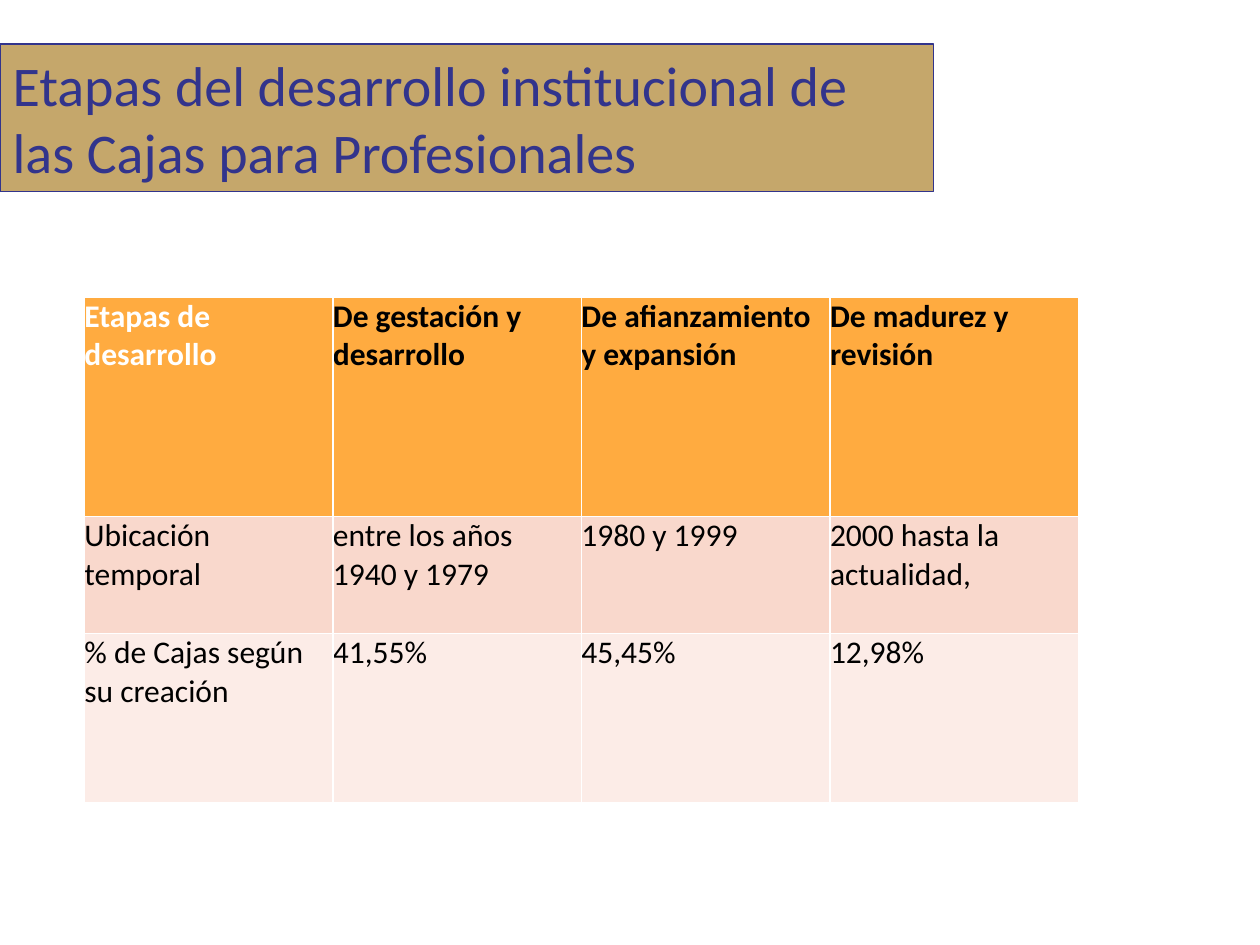
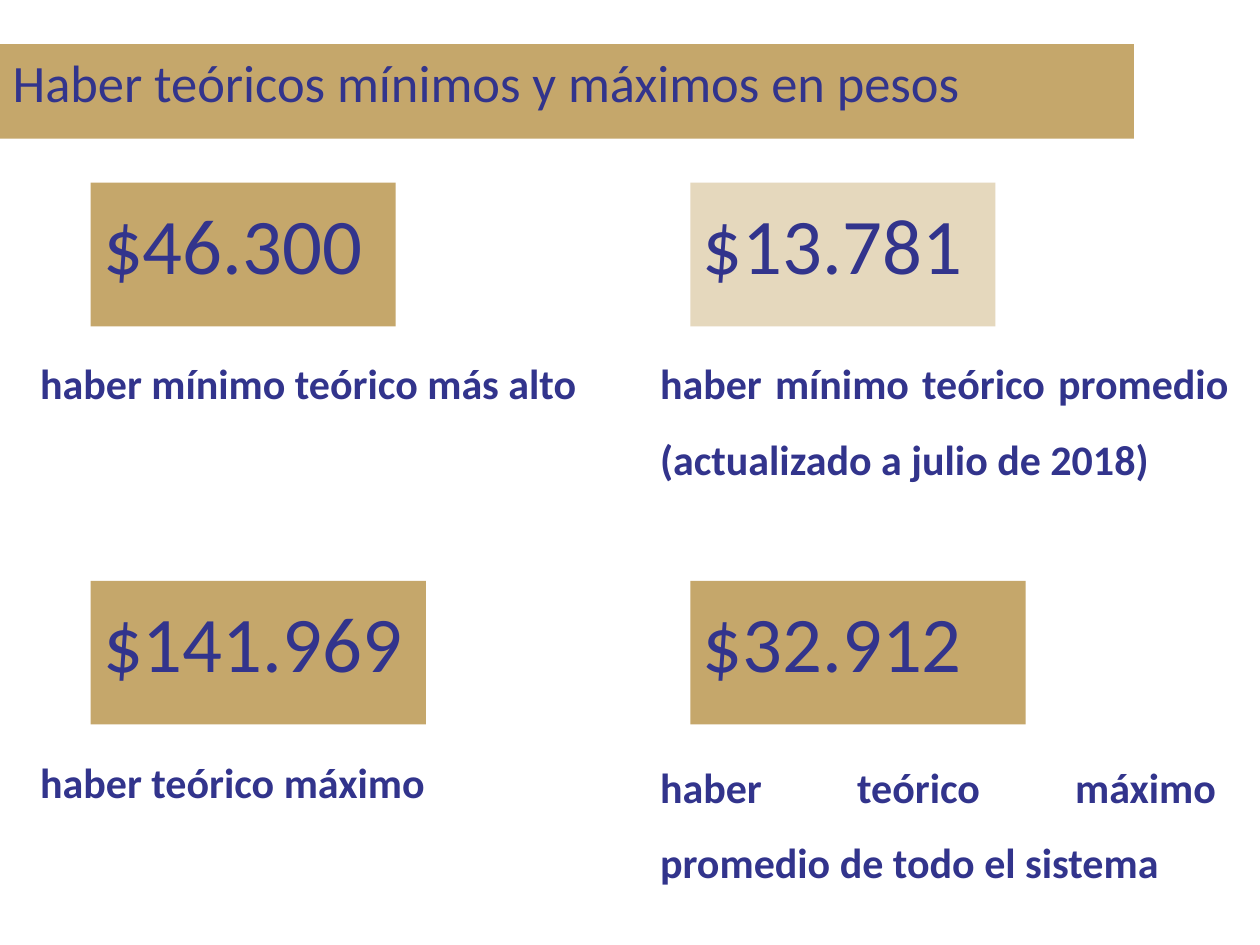
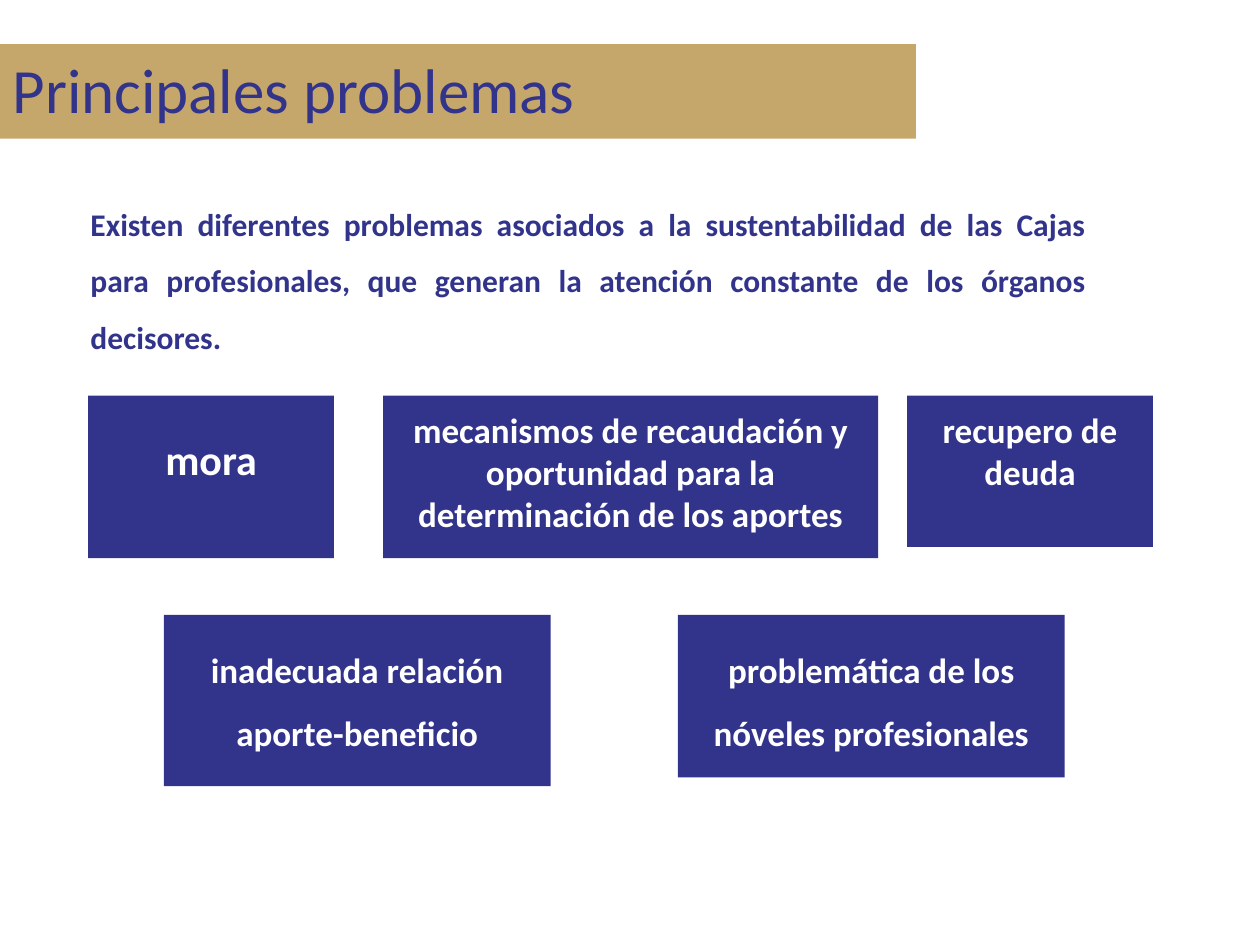
"""Build three slides on pension funds for professionals."""
from lxml import etree
from pptx import Presentation
from pptx.dml.color import RGBColor
from pptx.enum.shapes import MSO_SHAPE
from pptx.enum.text import MSO_ANCHOR, MSO_AUTO_SIZE, PP_ALIGN
from pptx.oxml.ns import qn
from pptx.util import Inches, Pt

RECT = MSO_SHAPE.RECTANGLE
TOP, MIDDLE = MSO_ANCHOR.TOP, MSO_ANCHOR.MIDDLE
LEFT, CENTER, JUST = PP_ALIGN.LEFT, PP_ALIGN.CENTER, PP_ALIGN.JUSTIFY
FIXED = MSO_AUTO_SIZE.NONE

THEME = {
    "font": "Calibri",
    "navy": "32348C", "gold": "C5A76B", "white": "FFFFFF", "black": "000000",
    "rows": ["FFAB40", "F9D8CC", "FCECE7"],
    "cell": 18, "intro": 18, "label": 20, "note": 24, "figure": 45,
}

TITLES = [
    ("Etapas del desarrollo institucional de las Cajas para Profesionales", 32, 7.41, 1.17),
    ("Haber teóricos mínimos y máximos en pesos", 30, 9, 0.75),
    ("Principales problemas", 36, 7.27, 0.75),
]

STAGES = [
    ["Etapas de desarrollo", "De gestación y desarrollo",
     "De afianzamiento y expansión", "De madurez y revisión"],
    ["Ubicación temporal", "entre los años 1940 y 1979", "1980 y 1999",
     "2000 hasta la actualidad,"],
    ["% de Cajas según su creación", "41,55%", "45,45%", "12,98%"],
]
HEIGHTS = [1.74, 0.93, 1.34]

AMOUNTS = [
    [("$46.300", None, "haber mínimo teórico más alto", (2.54, 4.71, 0.97)),
     ("$13.781", 44, "haber mínimo teórico promedio (actualizado a julio de 2018)",
      (2.54, 4.71, 0.97))],
    [("$141.969", None, "haber teórico máximo", (5.7, 3.81, 0.75)),
     ("$32.912", None, "haber teórico máximo promedio de todo el sistema",
      (5.74, 4.61, 1.49))],
]
BANDS = [(1.45, 2.42), (4.61, 2.66)]
SIDES = [(0.72, 0.22), (5.48, 5.14)]

INTRO = ("Existen diferentes problemas asociados a la sustentabilidad de las Cajas "
         "para profesionales, que generan la atención constante de los órganos decisores.")
ISSUES = [
    ("mora", (0.7, 3.14, 1.95, 1.29), THEME["note"], 1.5),
    ("mecanismos de recaudación y oportunidad para la determinación de los aportes",
     (3.04, 3.14, 3.93, 1.29), THEME["label"], 1),
    ("recupero de deuda", (7.2, 3.14, 1.95, 1.2), THEME["label"], 1),
    ("inadecuada relación aporte-beneficio", (1.3, 4.88, 3.07, 1.36), THEME["label"], 1.5),
    ("problemática de los nóveles profesionales",
     (5.38, 4.88, 3.07, 1.29), THEME["label"], 1.5),
]


def apply(target, **values):
    for name, value in values.items():
        setattr(target, name, value)


def write(frame, text, size, color, bold=False, align=LEFT, space=1):
    frame.text = text
    para = frame.paragraphs[0]
    apply(para, alignment=align, line_spacing=space)
    apply(para.font, name=THEME["font"], size=Pt(size), bold=bold)
    para.font.color.rgb = RGBColor.from_string(color)


def setup(frame, pad=0.1, anchor=TOP):
    side, edge = Inches(0.1), Inches(pad)
    apply(frame, word_wrap=True, auto_size=FIXED, vertical_anchor=anchor,
          margin_left=side, margin_right=side, margin_top=edge, margin_bottom=edge)


def paint(shape, color, alpha=None):
    shape.fill.solid()
    shape.fill.fore_color.rgb = RGBColor.from_string(color)
    if alpha:
        tone = shape.fill._xPr.find(qn("a:solidFill"))[0]
        etree.SubElement(tone, qn("a:alpha"), val=str(alpha * 1000))


def block(slide, box, text, fill, alpha=None, **style):
    shape = slide.shapes.add_shape(RECT, *map(Inches, box))
    shape.shadow.inherit = False
    shape.line.fill.background()
    paint(shape, fill, alpha)
    setup(shape.text_frame)
    write(shape.text_frame, text, **style)


def note(slide, box, text, size, anchor=TOP):
    frame = slide.shapes.add_textbox(*map(Inches, box)).text_frame
    setup(frame, anchor=anchor)
    write(frame, text, size, THEME["navy"], True, JUST, 1.5)


def start(deck, text, size, width, height):
    slide = deck.slides.add_slide(deck.slide_layouts[5])
    title = slide.shapes.title
    apply(title, left=0, top=Inches(0.35), width=Inches(width), height=Inches(height))
    paint(title, THEME["gold"])
    setup(title.text_frame, pad=0.05)
    write(title.text_frame, text, size, THEME["navy"])
    return slide


def show_stages(slide):
    line = slide.shapes.title.line
    line.color.rgb = RGBColor.from_string(THEME["navy"])
    line.width = Pt(0.75)
    box = map(Inches, (0.67, 2.36, 7.89, sum(HEIGHTS)))
    table = slide.shapes.add_table(len(STAGES), len(STAGES[0]), *box).table
    for r, (row, height) in enumerate(zip(STAGES, HEIGHTS)):
        table.rows[r].height = Inches(height)
        for c, text in enumerate(row):
            cell = table.cell(r, c)
            apply(cell, margin_left=0, margin_right=0, margin_top=0, margin_bottom=0)
            paint(cell, THEME["rows"][r])
            color = THEME["black" if r or c else "white"]
            write(cell.text_frame, text, THEME["cell"], color, bold=r == 0)


def show_amounts(slide):
    for row, (top, width) in zip(AMOUNTS, BANDS):
        for (amount, alpha, text, (y, w, h)), (left, edge) in zip(row, SIDES):
            block(slide, (left, top, width, 1.14), amount, THEME["gold"], alpha,
                  size=THEME["figure"], color=THEME["navy"])
            note(slide, (edge, y, w, h), text, THEME["note"])


def show_issues(slide):
    note(slide, (0.62, 1.4, 8.1, 1.5), INTRO, THEME["intro"], MIDDLE)
    for text, box, size, space in ISSUES:
        block(slide, box, text, THEME["navy"], size=size, color=THEME["white"],
              bold=True, align=CENTER, space=space)


def main():
    deck = Presentation()
    apply(deck, slide_width=Inches(10), slide_height=Inches(7.5))
    for title, show in zip(TITLES, (show_stages, show_amounts, show_issues)):
        show(start(deck, *title))
    deck.save("out.pptx")


if __name__ == "__main__":
    main()
